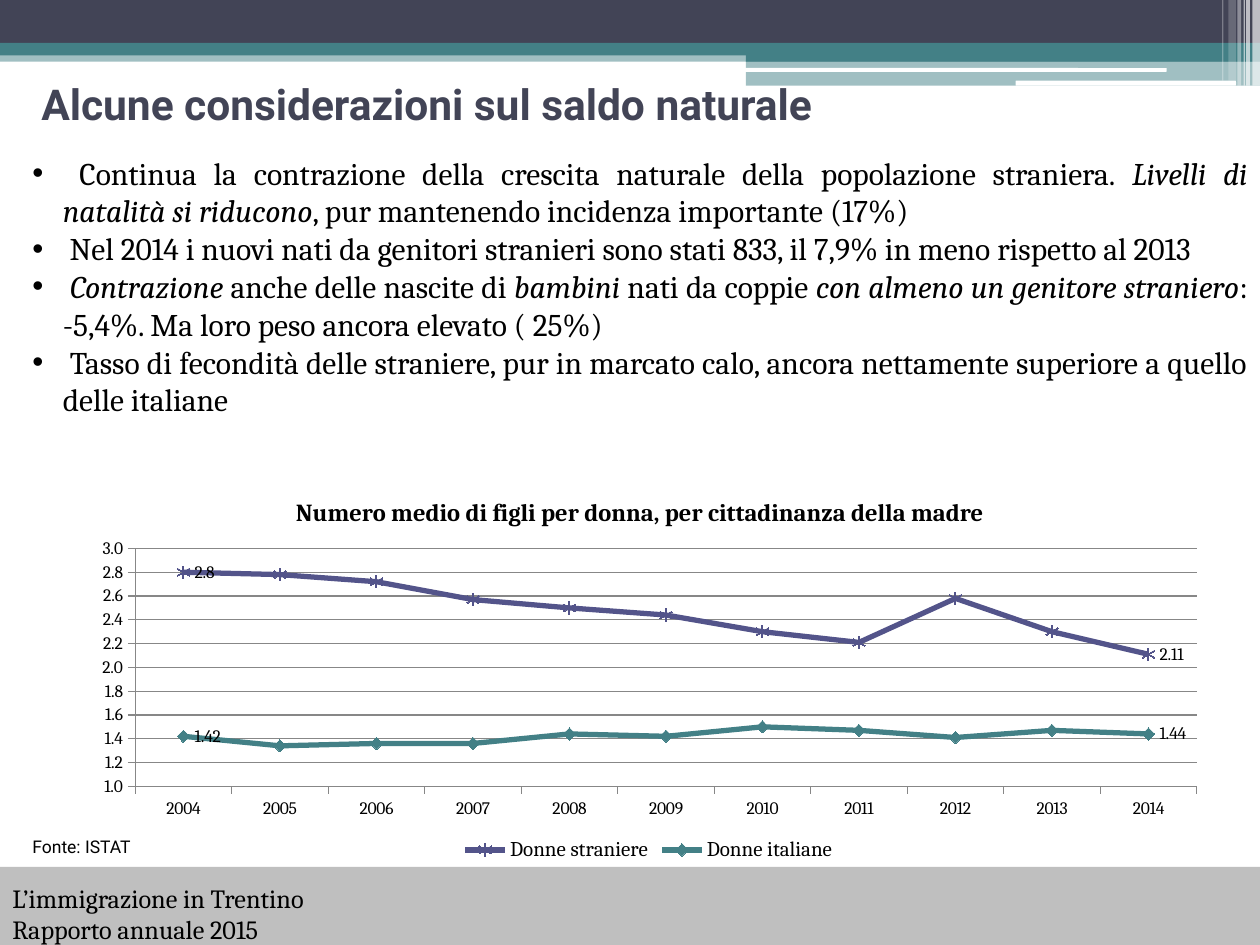
from lxml.etree import SubElement
from pptx import Presentation
from pptx.chart.data import CategoryChartData
from pptx.dml.color import RGBColor
from pptx.enum.chart import (XL_CHART_TYPE as Kind, XL_LABEL_POSITION as Spot,
                             XL_LEGEND_POSITION as Side, XL_MARKER_STYLE as Mark,
                             XL_TICK_MARK as Tick)
from pptx.enum.shapes import MSO_SHAPE as Form
from pptx.enum.text import MSO_ANCHOR as Anchor, PP_ALIGN as Align
from pptx.oxml import parse_xml
from pptx.oxml.ns import nsdecls, qn
from pptx.util import Inches, Pt

# Content; each bullet is a list of (text, italic) runs
TITLE = "Alcune considerazioni sul saldo naturale"
POINTS = [
    [(" Continua la contrazione della crescita naturale della popolazione straniera. ", False),
     ("Livelli di natalità si riducono", True),
     (", pur mantenendo incidenza importante (17%)", False)],
    [(" Nel 2014 i nuovi nati da genitori stranieri sono stati 833, "
      "il 7,9% in meno rispetto al 2013", False)],
    [(" ", False), ("Contrazione", True), (" anche delle nascite di ", False),
     ("bambini", True), (" nati da coppie ", False),
     ("con almeno un genitore straniero", True),
     (": -5,4%. Ma loro peso ancora elevato ( 25%)", False)],
    [(" Tasso di fecondità delle straniere, pur in marcato calo, "
      "ancora nettamente superiore a quello delle italiane", False)],
]
HEAD = "Numero medio di figli per donna, per cittadinanza della madre"
SOURCE = "Fonte: ISTAT"
FOOTER = ["L’immigrazione in Trentino", "Rapporto annuale 2015"]
YEARS = [str(year) for year in range(2004, 2015)]
SERIES = [
    ("Donne straniere", "53548A", Mark.STAR,
     [2.8, 2.78, 2.72, 2.57, 2.5, 2.44, 2.3, 2.21, 2.58, 2.3, 2.11]),
    ("Donne italiane", "438086", Mark.DIAMOND,
     [1.42, 1.34, 1.36, 1.36, 1.44, 1.42, 1.5, 1.47, 1.41, 1.47, 1.44]),
]

NAVY, TEAL, WHITE, GREY, RULE = "424456", "438086", "FFFFFF", "BFBFBF", "878787"
# Bands: left, top, width, height, colour, opacity in percent
BANDS = [
    (0, 0.4, 10, 0.09, TEAL, 50),
    (0, 0, 10, 0.34, NAVY, 100),
    (0, 0.34, 10, 0.1, TEAL, 100),
    (5.92, 0.39, 4.08, 0.1, TEAL, 100),
    (5.92, 0.48, 4.08, 0.2, TEAL, 50),
]
PILLS = [(5.91, 0.54, 3.35, 0.03), (8.06, 0.64, 1.75, 0.04)]
# Light stripes at the right edge: left, width, height, opacity
STRIPES = [
    (9.94, 0.06, 0.68, 65), (9.89, 0.03, 0.68, 65), (9.87, 0.01, 0.68, 60),
    (9.82, 0.03, 0.68, 40), (9.75, 0.06, 0.64, 20), (9.7, 0.01, 0.64, 30),
]


def rgb(code):
    return RGBColor.from_string(code)


def block(slide, x, y, w, h, color, alpha=100, form=Form.RECTANGLE):
    shape = slide.shapes.add_shape(form, *map(Inches, (x, y, w, h)))
    shape.shadow.inherit = False
    shape.line.fill.background()
    shape.fill.solid()
    shape.fill.fore_color.rgb = rgb(color)
    if alpha < 100:
        tone = shape.fill._xPr.find(qn("a:solidFill"))[0]
        SubElement(tone, qn("a:alpha"), val=str(alpha * 1000))
    return shape


def write(slide, paras, box, size, font="Cambria", color="000000", bold=False,
          align=Align.LEFT, anchor=Anchor.MIDDLE, bullet=None):
    """Each paragraph is a string or a list of (text, italic) runs."""
    frame = slide.shapes.add_textbox(*map(Inches, box)).text_frame
    frame.word_wrap = True
    frame.vertical_anchor = anchor
    for i, runs in enumerate(paras):
        para = frame.paragraphs[0] if i == 0 else frame.add_paragraph()
        para.alignment = align
        if bullet:
            props = para._p.get_or_add_pPr()
            props.set("marL", str(Inches(0.24)))
            props.set("indent", str(-Inches(0.24)))
            SubElement(props, qn("a:buFont"), typeface="Arial")
            SubElement(props, qn("a:buChar"), char=bullet)
        for text, slant in [(runs, False)] if isinstance(runs, str) else runs:
            run = para.add_run()
            run.text = text
            run.font.name, run.font.size = font, Pt(size)
            run.font.bold, run.font.italic = bold, slant
            run.font.color.rgb = rgb(color)


def style_axis(axis):
    axis.major_tick_mark = Tick.OUTSIDE
    axis.minor_tick_mark = Tick.NONE
    axis.format.line.color.rgb = rgb(RULE)


def add_lines(slide, box):
    data = CategoryChartData()
    data.categories = YEARS
    for name, _, _, vals in SERIES:
        data.add_series(name, vals)
    chart = slide.shapes.add_chart(Kind.LINE_MARKERS, *map(Inches, box), data).chart
    chart.has_title = False
    chart.font.name, chart.font.size = "Cambria", Pt(10)
    chart.font.color.rgb = rgb("000000")
    chart.has_legend = True
    chart.legend.position = Side.BOTTOM
    chart.legend.include_in_layout = False
    chart.legend.font.size = Pt(12)
    chart.legend.font.name = "Cambria"

    # Axes
    style_axis(chart.category_axis)
    axis = chart.value_axis
    style_axis(axis)
    axis.minimum_scale, axis.maximum_scale, axis.major_unit = 1, 3, 0.2
    axis.tick_labels.number_format = "0.0"
    axis.tick_labels.number_format_is_linked = False
    axis.major_gridlines.format.line.color.rgb = rgb(RULE)

    # Lines, labelled at the first and last year only
    for line, (_, color, mark, vals) in zip(chart.plots[0].series, SERIES):
        line.smooth = False
        line.format.line.color.rgb = rgb(color)
        line.format.line.width = Pt(3)
        line.marker.style, line.marker.size = mark, 7
        line.marker.format.line.color.rgb = rgb(color)
        if mark == Mark.STAR:
            line.marker.format.fill.background()
        else:
            line.marker.format.fill.solid()
            line.marker.format.fill.fore_color.rgb = rgb(color)
        for i in (0, len(vals) - 1):
            line.points[i].data_label.position = Spot.RIGHT
        line.data_labels.show_value = False

    # Inner plot area as shares of the chart
    area = chart._chartSpace.chart.plotArea
    for old in area.findall(qn("c:layout")):
        area.remove(old)
    shares = "".join(f'<c:{k} val="{v}"/>' for k, v in
                     zip("xywh", (0.05, 0.05, 0.93, 0.71)))
    area.insert(0, parse_xml(
        f'<c:layout {nsdecls("c")}><c:manualLayout><c:layoutTarget val="inner"/>'
        f'<c:xMode val="edge"/><c:yMode val="edge"/>{shares}'
        '</c:manualLayout></c:layout>'))


def main():
    deck = Presentation()
    deck.slide_width, deck.slide_height = Inches(10), Inches(7.5)
    slide = deck.slides.add_slide(deck.slide_layouts[6])

    # Header decoration
    for band in BANDS:
        block(slide, *band)
    for pill in PILLS:
        block(slide, *pill, WHITE, form=Form.ROUNDED_RECTANGLE)
    for x, w, h, alpha in STRIPES:
        block(slide, x, 0, w, h, WHITE, alpha)

    # Footer
    block(slide, 0, 6.88, 10, 0.62, GREY)
    write(slide, FOOTER, (0, 6.95, 10, 0.6), 15)

    # Title, bullets, chart
    write(slide, [TITLE], (0.23, 0.55, 9, 0.55), 24.3, font="Roboto",
          color=NAVY, bold=True)
    write(slide, POINTS, (0.16, 1.17, 9.84, 2.52), 18, align=Align.JUSTIFY,
          anchor=Anchor.TOP, bullet="•")
    add_lines(slide, (0.62, 4.22, 9.06, 2.66))
    write(slide, [HEAD], (1.72, 3.91, 6.72, 0.31), 14, bold=True, align=Align.CENTER)
    write(slide, [SOURCE], (0.16, 6.56, 5, 0.31), 10, font="Roboto")
    deck.save("out.pptx")


if __name__ == "__main__":
    main()
